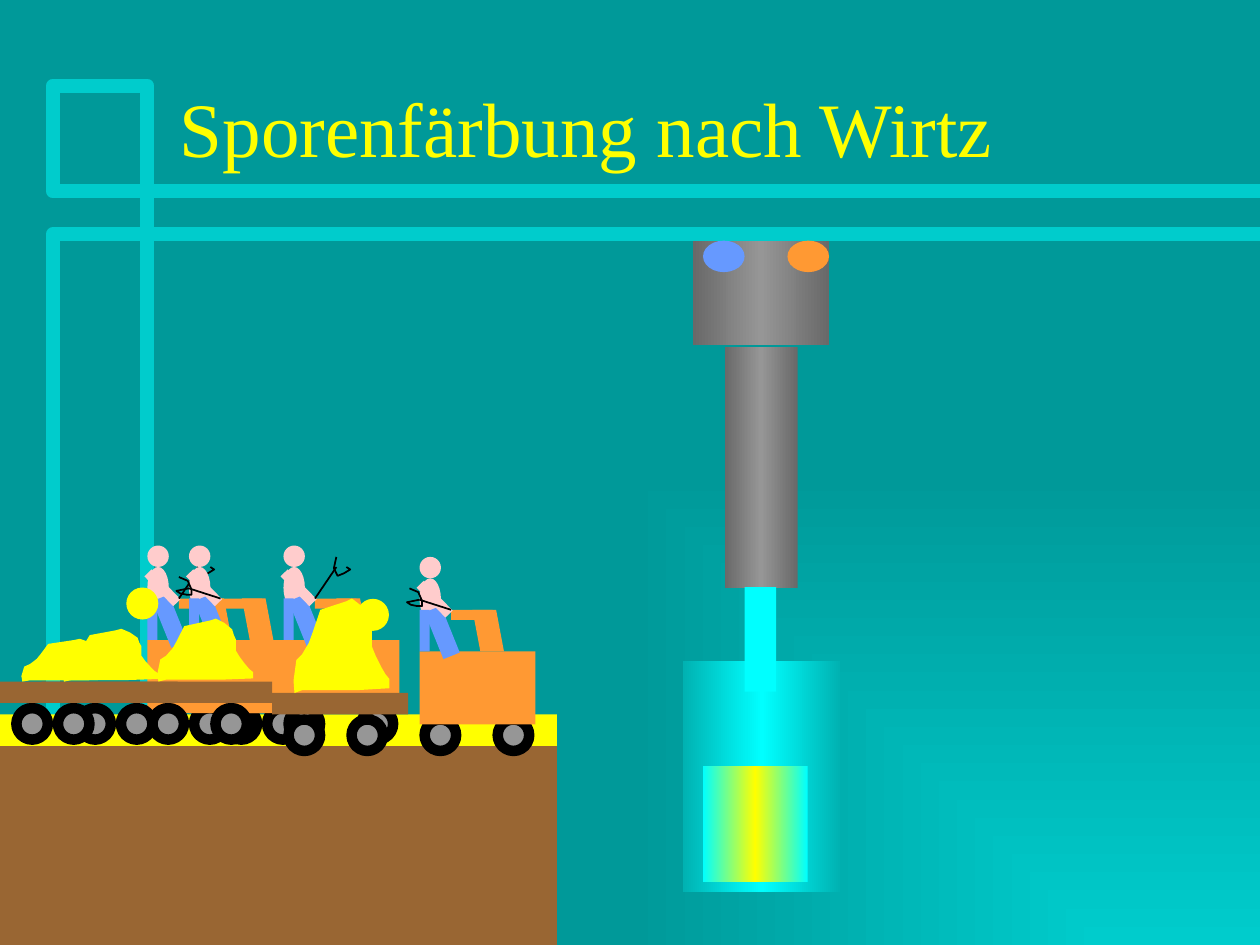
import copy

import pptx
import pptx.dml.color
import pptx.enum.shapes
import pptx.enum.text
import pptx.oxml
import pptx.oxml.ns
import pptx.util

Inches = pptx.util.Inches
RGBColor = pptx.dml.color.RGBColor
KINDS = pptx.enum.shapes.MSO_SHAPE
qn = pptx.oxml.ns.qn

TEAL = RGBColor(0x00, 0x99, 0x99)
TURQUOISE = RGBColor(0x00, 0xCC, 0xCC)
DEEP_CYAN = RGBColor(0x00, 0xB2, 0xB2)
CYAN = RGBColor(0x00, 0xFF, 0xFF)
YELLOW = RGBColor(0xFF, 0xFF, 0x00)
BROWN = RGBColor(0x99, 0x66, 0x33)
GREY = RGBColor(0x96, 0x96, 0x96)
DARK_GREY = RGBColor(0x69, 0x69, 0x69)
ORANGE = RGBColor(0xFF, 0x99, 0x33)
BLUE = RGBColor(0x66, 0x99, 0xFF)
SKIN = RGBColor(0xFF, 0xCC, 0xCC)
BLACK = RGBColor(0, 0, 0)

LOAD_WIDTH = 0.76
LOAD_OUTLINE = [
    (0, 0.87), (0.03, 0.65), (0.09, 0.59), (0.16, 0.47), (0.2, 0.36), (0.28, 0.12),
    (0.55, 0.03), (0.61, 0), (0.7, 0.07), (0.78, 0.17), (0.8, 0.27), (0.82, 0.33),
    (0.82, 0.44), (0.82, 0.51), (0.86, 0.61), (0.92, 0.73), (0.96, 0.8), (1, 0.85),
    (1, 0.95), (0.67, 0.97), (0.45, 0.97), (0.21, 0.97), (0.09, 0.97), (0.01, 1),
]
RAISED_ARM = {
    "reach": (0.42, -0.58),
    "hand": [(0.42, -0.66), (0.4, -0.57), (0.43, -0.51), (0.48, -0.53), (0.53, -0.56), (0.5, -0.58)],
}
THROWING_ARM = {
    "reach": (0, -0.41),
    "hand": [(-0.08, -0.5), (-0.01, -0.47), (0.02, -0.4), (0.02, -0.36),
             (-0.02, -0.36), (-0.07, -0.37), (-0.1, -0.39), (0, -0.41)],
}


def set_values(target, values):
    """Set each named attribute on the target."""
    for name, value in values.items():
        setattr(target, name, value)


def apply_gradient(fill, owner, colours):
    """Fill with evenly spaced colours from left to right."""
    fill.gradient()
    fill.gradient_angle = 0
    stop_list = next(owner.iter(qn("a:gsLst")))
    for _ in colours[2:]:
        stop_list.append(copy.deepcopy(stop_list[-1]))
    for index, (stop, colour) in enumerate(zip(fill.gradient_stops, colours)):
        set_values(stop, {"position": index / (len(colours) - 1)})
        stop.color.rgb = colour


def paint(shape, fill=None, line=None, width=1):
    """Give a shape a plain or graded fill and an optional outline."""
    shape.shadow.inherit = False
    if fill is None:
        shape.fill.background()
    elif isinstance(fill, list):
        apply_gradient(shape.fill, shape.element, fill)
    else:
        shape.fill.solid()
        shape.fill.fore_color.rgb = fill
    if line is None:
        shape.line.fill.background()
    else:
        shape.line.color.rgb = line
        shape.line.width = pptx.util.Pt(width)
    return shape


def add_part(shapes, kind, origin, box, *style):
    """Add a preset shape in a box relative to the origin."""
    left, top, width, height = box
    place = (origin[0] + left, origin[1] + top, width, height)
    return paint(shapes.add_shape(kind, *map(Inches, place)), *style)


def add_outline(shapes, origin, points, closed, *style):
    """Draw straight segments through points relative to the origin."""
    corners = [(Inches(origin[0] + x), Inches(origin[1] + y)) for x, y in points]
    builder = shapes.build_freeform(*corners[0])
    builder.add_line_segments(corners[1:], close=closed)
    return paint(builder.convert_to_shape(), *style)


def draw_background(slide):
    """Shade the slide from its lower right corner."""
    apply_gradient(slide.background.fill, slide.element, [TURQUOISE, TEAL])
    gradient = next(slide.element.iter(qn("a:gradFill")))
    gradient.replace(gradient.find(qn("a:lin")), pptx.oxml.parse_xml(
        '<a:path xmlns:a="http://schemas.openxmlformats.org/drawingml/2006/main" path="rect">'
        '<a:fillToRect l="100000" t="100000"/></a:path>'))


def draw_frame(slide, left, top):
    """Draw the two crossing bands that frame the slide."""
    shapes = slide.shapes.add_group_shape().shapes
    lower_band = [(9.6, 1.18), (0, 1.18), (0, 6.82)]
    upper_band = [(0.75, 6.82), (0.75, 0), (0, 0), (0, 0.84), (9.6, 0.84)]
    for band_points in (lower_band, upper_band):
        band = add_outline(shapes, (left, top), band_points, False, None, TURQUOISE, 8)
        band.line._get_or_add_ln().append(band.element.makeelement(qn("a:round"), {}))


def draw_title(slide, left, top, width, height):
    """Write the title at the bottom of its box."""
    title = slide.shapes.add_textbox(*map(Inches, (left, top, width, height))).text_frame
    set_values(title, {"word_wrap": True, "vertical_anchor": pptx.enum.text.MSO_ANCHOR.BOTTOM})
    heading = title.paragraphs[0].add_run()
    heading.text = "Sporenfärbung nach Wirtz"
    set_values(heading.font, {"name": "Times New Roman", "size": pptx.util.Pt(44)})
    heading.font.color.rgb = YELLOW


def draw_ground(slide, left, top, width, height):
    """Lay a yellow road on brown soil."""
    road = 0.25
    add_part(slide.shapes, KINDS.RECTANGLE, (left, top), (0, road, width, height - road), BROWN)
    add_part(slide.shapes, KINDS.RECTANGLE, (left, top), (0, 0, width, road), YELLOW)


def draw_driver(shapes, cab, arm):
    """Stand a driver on the cab with one arm reaching out."""
    body_parts = [
        (KINDS.OVAL, (0, -0.75, 0.17, 0.17), SKIN, 0),
        (KINDS.OVAL, (0, -0.58, 0.17, 0.33), SKIN, 0),
        (KINDS.RECTANGLE, (0, -0.33, 0.08, 0.33), BLUE, 0),
        (KINDS.RECTANGLE, (0.11, -0.35, 0.14, 0.4), BLUE, 338),
        (KINDS.RECTANGLE, (0.08, -0.58, 0.08, 0.33), SKIN, 316),
    ]
    for kind, box, colour, angle in body_parts:
        add_part(shapes, kind, cab, box, colour).rotation = angle
    ends = [cab[axis] + point[axis] for point in ((0.25, -0.33), arm["reach"]) for axis in (0, 1)]
    stick = shapes.add_connector(pptx.enum.shapes.MSO_CONNECTOR.STRAIGHT, *map(Inches, ends))
    stick.line.color.rgb = BLACK
    stick.line.width = pptx.util.Pt(1)
    stick.element.spPr.append(stick.element.makeelement(qn("a:effectLst"), {}))
    add_outline(shapes, cab, arm["hand"], False, None, BLACK)


def draw_truck(slide, left, top, load_height, arm, wheels):
    """Draw a loaded truck whose cab has the given corner."""
    shapes = slide.shapes.add_group_shape().shapes
    cab = (left, top)
    for wheel in wheels:
        add_part(shapes, KINDS.OVAL, cab, (wheel, 0.54, 0.25, 0.25), GREY, BLACK, 6)
    add_part(shapes, KINDS.RECTANGLE, cab, (0, 0, 0.92, 0.58), ORANGE)
    window_post = add_part(shapes, KINDS.PARALLELOGRAM, cab, (0.42, -0.33, 0.25, 0.33), ORANGE)
    window_post.adjustments[0] = 0.25
    window_post.element.spPr.xfrm.set("flipH", "1")
    add_part(shapes, KINDS.RECTANGLE, cab, (0.25, -0.33, 0.33, 0.08), ORANGE)
    add_part(shapes, KINDS.RECTANGLE, cab, (-1.17, 0.33, 1.08, 0.17), BROWN)
    load = [(x * LOAD_WIDTH, y * load_height) for x, y in LOAD_OUTLINE]
    add_outline(shapes, (left - 1, top + 0.33 - load_height), load, True, YELLOW)
    draw_driver(shapes, cab, arm)
    if arm is THROWING_ARM:
        add_part(shapes, KINDS.OVAL, cab, (-0.49, -0.41, 0.24, 0.24), YELLOW, YELLOW)


def draw_burner(slide, left, top):
    """Draw the burner, its flame and the heated glass below."""
    origin = (left, top)
    add_part(slide.shapes, KINDS.RECTANGLE, origin, (0, 3.34, 1.25, 1.83), [DEEP_CYAN, CYAN, DEEP_CYAN])
    burner = slide.shapes.add_group_shape().shapes
    steel = [DARK_GREY, GREY, DARK_GREY]
    add_part(burner, KINDS.RECTANGLE, origin, (0.33, 0.84, 0.58, 1.92), steel)
    add_part(burner, KINDS.RECTANGLE, origin, (0.08, 0, 1.08, 0.83), steel)
    for knob, colour in ((0.83, ORANGE), (0.16, BLUE)):
        add_part(burner, KINDS.OVAL, origin, (knob, 0, 0.33, 0.25), colour)
    add_part(slide.shapes, KINDS.RECTANGLE, origin, (0.49, 2.75, 0.25, 0.83), CYAN)
    add_part(slide.shapes, KINDS.RECTANGLE, origin, (0.16, 4.17, 0.83, 0.92), [CYAN, YELLOW, CYAN])


def main():
    """Build and save the slide."""
    deck = pptx.Presentation()
    set_values(deck, {"slide_width": Inches(10), "slide_height": Inches(7.5)})
    slide = deck.slides.add_slide(deck.slide_layouts[6])
    draw_background(slide)
    draw_frame(slide, 0.42, 0.68)
    draw_title(slide, 1.33, 0.23, 8.5, 1.19)
    draw_ground(slide, 0, 5.67, 4.42, 1.83)
    wheels = (0.04, 0.62, -0.54, -1.04)
    draw_truck(slide, 1.17, 5.08, 0.34, RAISED_ARM, wheels[1:])
    draw_truck(slide, 1.5, 5.08, 0.42, THROWING_ARM, wheels)
    draw_truck(slide, 2.25, 5.08, 0.5, RAISED_ARM, wheels)
    draw_truck(slide, 3.33, 5.17, 0.75, THROWING_ARM, wheels)
    draw_burner(slide, 5.42, 1.91)
    deck.save("out.pptx")


if __name__ == "__main__":
    main()
